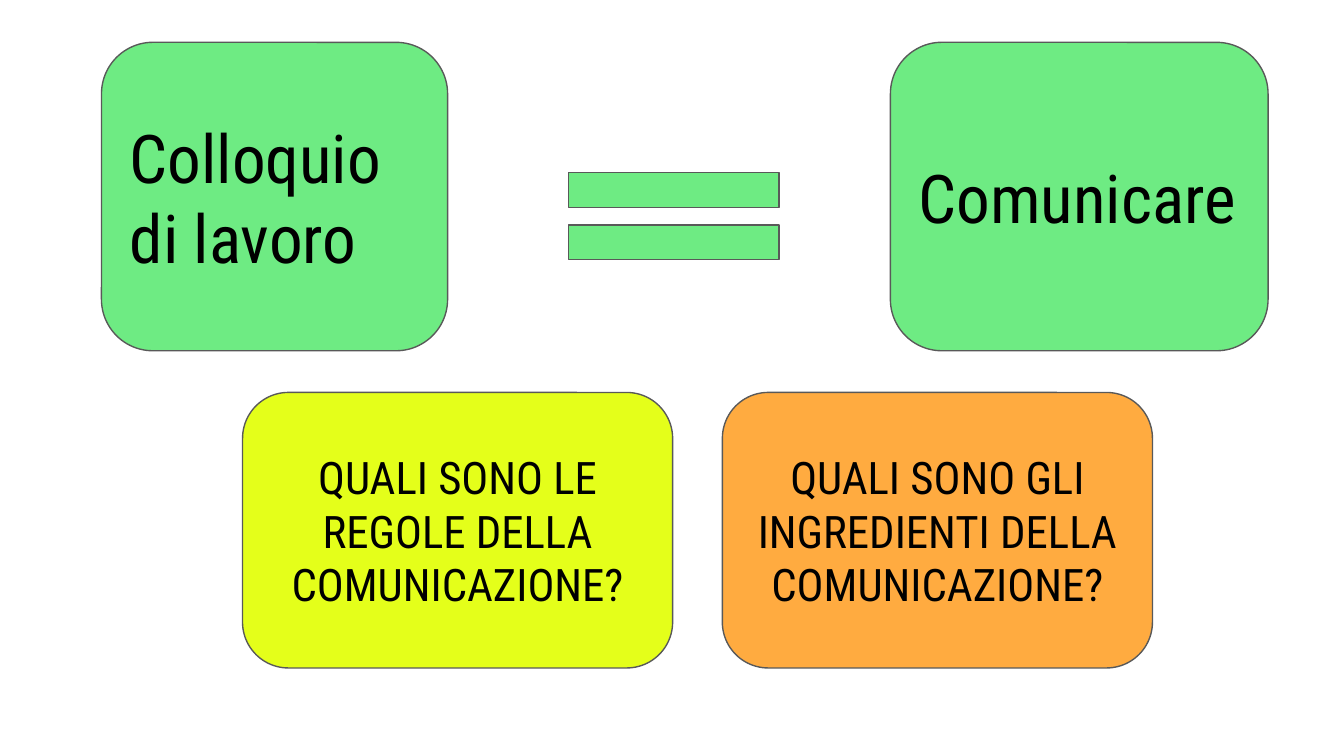
from dataclasses import dataclass

from pptx import Presentation
from pptx.dml.color import RGBColor
from pptx.enum.shapes import MSO_SHAPE
from pptx.enum.text import MSO_ANCHOR, PP_ALIGN
from pptx.shapes.autoshape import Shape
from pptx.slide import Slide
from pptx.util import Pt

ROUND, EQUAL = MSO_SHAPE.ROUNDED_RECTANGLE, MSO_SHAPE.MATH_EQUAL
LEFT, CENTER = PP_ALIGN.LEFT, PP_ALIGN.CENTER
MIDDLE = MSO_ANCHOR.MIDDLE

GREEN = RGBColor(0x6E, 0xEB, 0x83)
YELLOW = RGBColor(0xE4, 0xFF, 0x1A)
ORANGE = RGBColor(0xFF, 0xAB, 0x40)
GREY = RGBColor(0x59, 0x59, 0x59)
BLACK = RGBColor(0, 0, 0)

SCALE = 4572  # EMU per px, 200 px to the inch
WIDTH, HEIGHT = 2000, 1125
FONT = "Roboto Condensed"


@dataclass(frozen=True)
class Box:
    left: int
    top: int
    width: int
    height: int
    fill: RGBColor


@dataclass(frozen=True)
class Card(Box):
    text: str
    size: int
    align: PP_ALIGN


def px(value: int) -> int:
    return value * SCALE


def add_box(slide: Slide, box: Box, kind: MSO_SHAPE) -> Shape:
    shape = slide.shapes.add_shape(
        kind, px(box.left), px(box.top), px(box.width), px(box.height))
    shape.shadow.inherit = False
    shape.fill.solid()
    shape.fill.fore_color.rgb = box.fill
    shape.line.color.rgb = GREY
    shape.line.width = Pt(0.75)
    return shape


def add_card(slide: Slide, card: Card) -> None:
    frame = add_box(slide, card, ROUND).text_frame
    inset = px(20)
    layout = {"word_wrap": True, "vertical_anchor": MIDDLE,
              "margin_left": inset, "margin_right": inset,
              "margin_top": inset, "margin_bottom": inset}
    for name, value in layout.items():
        setattr(frame, name, value)
    para = frame.paragraphs[0]
    para.alignment = card.align
    run = para.add_run()
    run.text = card.text
    for name, value in {"name": FONT, "size": Pt(card.size)}.items():
        setattr(run.font, name, value)
    run.font.color.rgb = BLACK


# Top row: the two sides of the equation; bottom row: the questions
TOP = {"top": 63, "height": 459, "fill": GREEN, "size": 36, "align": LEFT}
LOW = {"top": 584, "width": 640, "height": 410, "size": 24, "align": CENTER}
TALK = Card(left=151, width=515, text="Colloquio di lavoro", **TOP)
SIGN = Box(790, 212, 426, 220, GREEN)
SHARE = Card(left=1325, width=562, text="Comunicare", **TOP)
ASKS = [
    Card(left=361, fill=YELLOW,
         text="QUALI SONO LE REGOLE DELLA COMUNICAZIONE?", **LOW),
    Card(left=1075, fill=ORANGE,
         text="QUALI SONO GLI INGREDIENTI DELLA COMUNICAZIONE?", **LOW),
]


def main() -> None:
    deck = Presentation()
    deck.slide_width, deck.slide_height = px(WIDTH), px(HEIGHT)
    slide = deck.slides.add_slide(deck.slide_layouts[6])

    # Equation
    add_card(slide, TALK)
    add_box(slide, SIGN, EQUAL)
    add_card(slide, SHARE)

    # Questions
    for card in ASKS:
        add_card(slide, card)

    deck.save("out.pptx")


if __name__ == "__main__":
    main()
